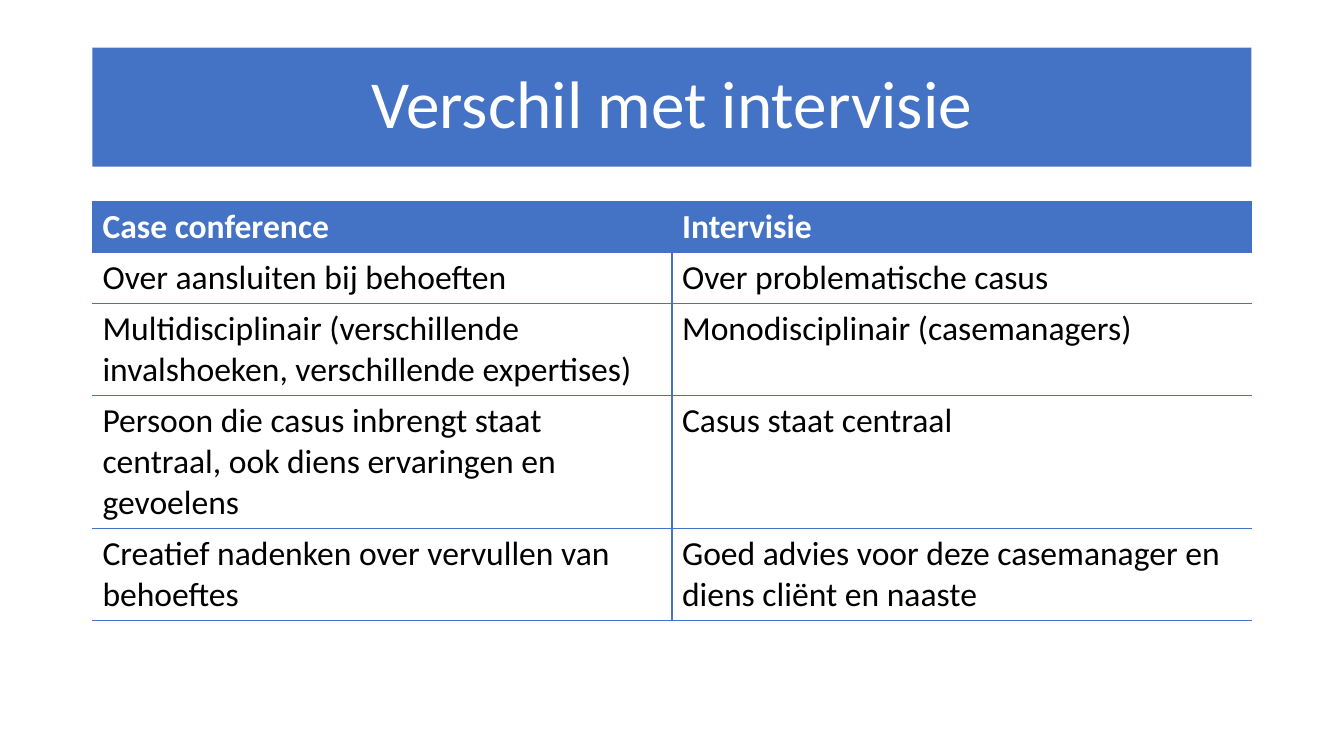
from typing import NamedTuple

from lxml import etree
from pptx import Presentation
from pptx.dml.color import RGBColor
from pptx.enum.shapes import MSO_SHAPE
from pptx.enum.text import MSO_ANCHOR, PP_ALIGN
from pptx.oxml.ns import qn
from pptx.slide import Slide
from pptx.table import _Cell
from pptx.text.text import _Paragraph
from pptx.util import Cm, Pt

RECT = MSO_SHAPE.RECTANGLE
MIDDLE = MSO_ANCHOR.MIDDLE
CENTER = PP_ALIGN.CENTER

BLUE = RGBColor(0x44, 0x72, 0xC4)
WHITE = RGBColor(0xFF, 0xFF, 0xFF)
BLACK = RGBColor(0x00, 0x00, 0x00)

FONT = "Calibri"
LEFT, WIDTH = Cm(2.33), Cm(29.21)


class Row(NamedTuple):
    case: str
    peer: str


ROWS = [
    Row("Case conference", "Intervisie"),
    Row("Over aansluiten bij behoeften", "Over problematische casus"),
    Row("Multidisciplinair (verschillende invalshoeken, verschillende expertises)",
        "Monodisciplinair (casemanagers)"),
    Row("Persoon die casus inbrengt staat centraal, ook diens ervaringen en gevoelens",
        "Casus staat centraal"),
    Row("Creatief nadenken over vervullen van behoeftes",
        "Goed advies voor deze casemanager en diens cliënt en naaste"),
]


def style(para: _Paragraph, size: int, color: RGBColor, bold: bool = False) -> None:
    for run in para.runs:
        font = run.font
        font.name, font.size, font.bold = FONT, Pt(size), bold
        font.color.rgb = color


def add_title(slide: Slide, text: str) -> None:
    bar = slide.shapes.add_shape(RECT, LEFT, Cm(1.2), WIDTH, Cm(3))
    bar.shadow.inherit = False
    bar.fill.solid()
    bar.fill.fore_color.rgb = BLUE
    bar.line.fill.background()
    frame = bar.text_frame
    frame.text = text
    frame.word_wrap = True
    frame.vertical_anchor = MIDDLE
    para = frame.paragraphs[0]
    para.alignment = CENTER
    para.line_spacing = 0.9
    style(para, 48, WHITE)


def set_edges(cell: _Cell, inner: str) -> None:
    """Draw the top, bottom and inner side in blue, and clear the outer side."""
    props = cell._tc.get_or_add_tcPr()
    for side in "LRTB":
        line = etree.SubElement(props, qn(f"a:ln{side}"), w=str(Pt(1)))
        if side in ("T", "B", inner):
            fill = etree.SubElement(line, qn("a:solidFill"))
            etree.SubElement(fill, qn("a:srgbClr"), val=str(BLUE))
        else:
            etree.SubElement(line, qn("a:noFill"))


def fill_cell(cell: _Cell, text: str, head: bool, inner: str) -> None:
    set_edges(cell, inner)
    if head:
        cell.fill.solid()
        cell.fill.fore_color.rgb = BLUE
    else:
        cell.fill.background()
    cell.text_frame.text = text
    style(cell.text_frame.paragraphs[0], 24, WHITE if head else BLACK, head)


def add_grid(slide: Slide, rows: list[Row]) -> None:
    high = Cm(1.03)
    frame = slide.shapes.add_table(len(rows), 2, LEFT, Cm(5.07), WIDTH, high * len(rows))
    table = frame.table
    table.horz_banding = False
    for i, row in enumerate(rows):
        for j, (text, inner) in enumerate(zip(row, "RL")):
            fill_cell(table.cell(i, j), text, i == 0, inner)


def main() -> None:
    deck = Presentation()
    deck.slide_width, deck.slide_height = Cm(33.87), Cm(19.05)
    slide = deck.slides.add_slide(deck.slide_layouts[6])
    add_title(slide, "Verschil met intervisie")
    add_grid(slide, ROWS)
    deck.save("out.pptx")


if __name__ == "__main__":
    main()
